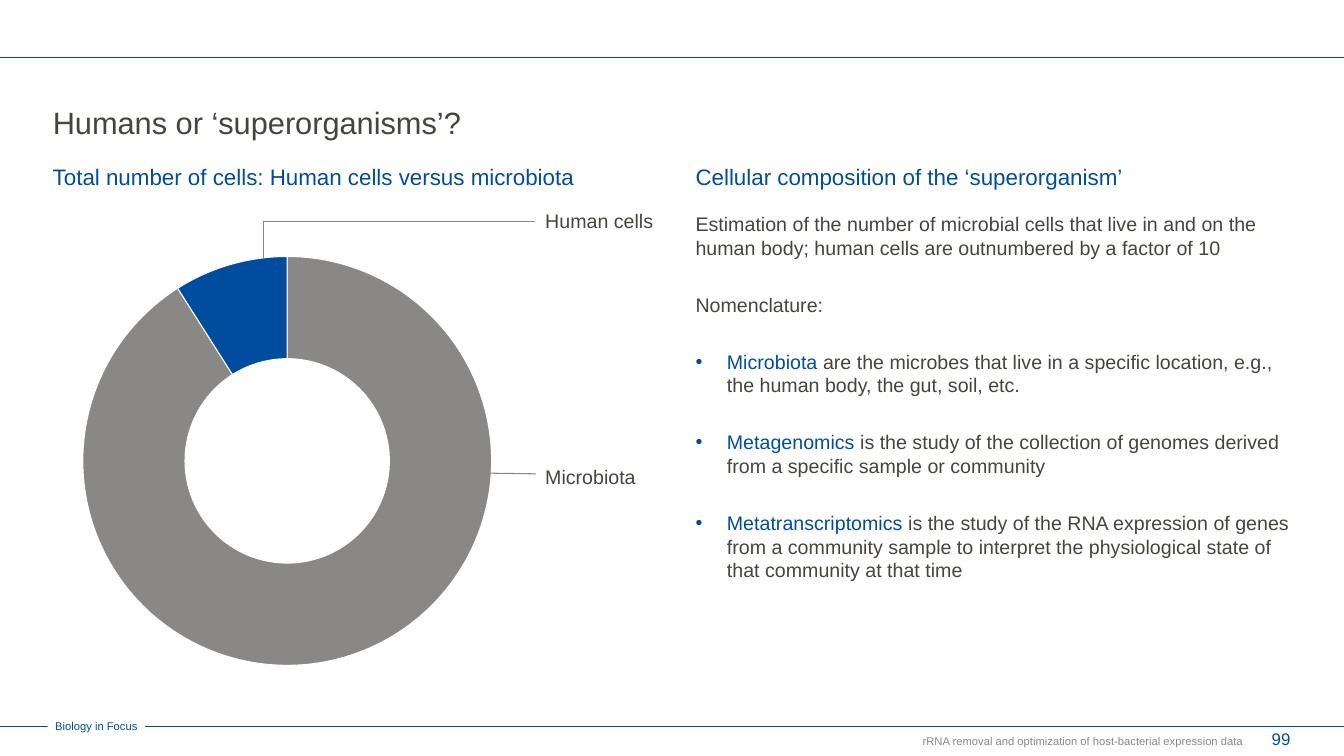
import pptx
import pptx.chart.data
import pptx.dml.color
import pptx.enum.chart
import pptx.enum.shapes
import pptx.enum.text
import pptx.oxml
import pptx.oxml.ns
import pptx.util
from lxml import etree

Cm, Pt = pptx.util.Cm, pptx.util.Pt
ALIGN = pptx.enum.text.PP_ALIGN
ANCHOR = pptx.enum.text.MSO_ANCHOR
LINE = pptx.enum.shapes.MSO_CONNECTOR
qn = pptx.oxml.ns.qn

BLUE, GREY, DARK, WHITE = "004D9F", "8A8886", "47443F", "FFFFFF"
WIDTH, HEIGHT = 33.87, 19.05
LEFT, RIGHT, COLUMN = 1.33, 17.53, 15.01
LABEL_X = 13.74

TITLE = "Humans or ‘superorganisms’?"
HEADINGS = [
    (LEFT, "Total number of cells: Human cells versus microbiota"),
    (RIGHT, "Cellular composition of the ‘superorganism’"),
]
INTRO = [
    "Estimation of the number of microbial cells that live in and on the "
    "human body; human cells are outnumbered by a factor of 10",
    "Nomenclature:",
]
TERMS = [
    ("Microbiota", " are the microbes that live in a specific location, e.g., "
     "the human body, the gut, soil, etc."),
    ("Metagenomics", " is the study of the collection of genomes derived from "
     "a specific sample or community"),
    ("Metatranscriptomics", " is the study of the RNA expression of genes from "
     "a community sample to interpret the physiological state of that "
     "community at that time"),
]
SLICES = [("1", 91, GREY), ("2", 9, BLUE)]
LABELS = [(5.21, "Human cells"), (11.66, "Microbiota")]
PLOT = {"x": 0.002, "y": 0.038, "w": 0.761, "h": 0.936}
TAGLINE = "Biology in Focus"
FOOTER = "rRNA removal and optimization of host-bacterial expression data"


def rgb(value):
    return pptx.dml.color.RGBColor.from_string(value)


def add_run(p, text, size=14, color=DARK):
    r = p.add_run()
    r.text = text
    r.font.name, r.font.size = "Arial", Pt(size)
    r.font.color.rgb = rgb(color)


def set_frame(tf, anchor=ANCHOR.TOP, wrap=True):
    tf.margin_left = tf.margin_right = tf.margin_top = tf.margin_bottom = 0
    tf.auto_size = pptx.enum.text.MSO_AUTO_SIZE.NONE
    tf.vertical_anchor, tf.word_wrap = anchor, wrap


def add_text(s, box, text, size=14, color=DARK, align=ALIGN.LEFT,
             spacing=1.0, **frame):
    sp = s.shapes.add_textbox(*map(Cm, box))
    set_frame(sp.text_frame, **frame)
    p = sp.text_frame.paragraphs[0]
    p.alignment, p.line_spacing = align, spacing
    add_run(p, text, size, color)
    return sp


def add_line(s, start, end, color, kind=LINE.STRAIGHT):
    sp = s.shapes.add_connector(kind, *map(Cm, start + end))
    sp.line.color.rgb, sp.line.width = rgb(color), Pt(0.75)
    etree.SubElement(sp._element.spPr, qn("a:effectLst"))
    return sp


def add_bullet(p):
    pPr = p._p.get_or_add_pPr()
    pPr.set("marL", str(Cm(0.79)))
    pPr.set("indent", str(-Cm(0.79)))
    color = etree.SubElement(pPr, qn("a:buClr"))
    etree.SubElement(color, qn("a:srgbClr"), val=BLUE)
    etree.SubElement(pPr, qn("a:buFont"), typeface="Arial")
    etree.SubElement(pPr, qn("a:buChar"), char="•")


def add_title(s):
    sp = s.shapes.title
    sp.left, sp.top, sp.width, sp.height = map(Cm, (LEFT, 2.72, 31.2, 0.89))
    set_frame(sp.text_frame)
    p = sp.text_frame.paragraphs[0]
    p.alignment, p.line_spacing = ALIGN.LEFT, 0.9
    add_run(p, TITLE, 22)


def add_body(s):
    sp = s.shapes.add_textbox(*map(Cm, (RIGHT, 5.34, COLUMN, 12.2)))
    tf = sp.text_frame
    set_frame(tf)
    for i, item in enumerate(INTRO + TERMS):
        p = tf.add_paragraph() if i else tf.paragraphs[0]
        if isinstance(item, tuple):
            add_bullet(p)
            add_run(p, item[0], color=BLUE)
            add_run(p, item[1])
        else:
            add_run(p, item)
        if i:
            p.space_before = Pt(24)


def add_ring(s):
    names, values, colors = zip(*SLICES)
    data = pptx.chart.data.CategoryChartData()
    data.categories = names
    data.add_series("Series 1", values)
    kind = pptx.enum.chart.XL_CHART_TYPE.DOUGHNUT
    box = map(Cm, (2.06, 6.04, 13.54, 11.02))
    chart = s.shapes.add_chart(kind, *box, data).chart
    chart.has_legend = chart.has_title = False
    chart.font.name, chart.font.size = "Arial", Pt(10)
    chart.font.color.rgb = rgb(DARK)
    plot = chart.plots[0]
    plot.vary_by_categories = True
    for i, color in enumerate(colors):
        look = plot.series[0].points[i].format
        look.fill.solid()
        look.fill.fore_color.rgb = rgb(color)
        look.line.color.rgb, look.line.width = rgb(WHITE), Pt(0.75)
    area = chart._chartSpace.chart.plotArea
    area.find(".//" + qn("c:holeSize")).set("val", "50")
    for old in area.findall(qn("c:layout")):
        area.remove(old)
    layout = etree.Element(qn("c:layout"))
    area.insert(0, layout)
    manual = etree.SubElement(layout, qn("c:manualLayout"))
    etree.SubElement(manual, qn("c:layoutTarget"), val="inner")
    for mode in ("xMode", "yMode"):
        etree.SubElement(manual, qn("c:" + mode), val="edge")
    for side, share in PLOT.items():
        etree.SubElement(manual, qn("c:" + side), val=str(share))


def add_leaders(s):
    bent = add_line(s, (13.49, 5.59), (6.65, 6.5), GREY, LINE.ELBOW)
    guides = bent._element.spPr.find(qn("a:prstGeom")).get_or_add_avLst()
    etree.SubElement(guides, qn("a:gd"), name="adj1", fmla="val 100000")
    add_line(s, (11.46, 11.91), (13.51, 11.94), GREY)


def main():
    prs = pptx.Presentation()
    prs.slide_width, prs.slide_height = Cm(WIDTH), Cm(HEIGHT)
    s = prs.slides.add_slide(prs.slide_layouts[5])

    for y in (1.45, 18.31):
        add_line(s, (0, y), (WIDTH, y), BLUE)
    tag = add_text(s, (1.2, 18.03, 2.46, 0.51), TAGLINE, size=8,
                   color=BLUE, align=ALIGN.CENTER, anchor=ANCHOR.MIDDLE)
    tag.fill.solid()
    tag.fill.fore_color.rgb = rgb(WHITE)
    add_text(s, (12.14, 18.5, 19.2, 0.33), FOOTER, size=8, color=GREY,
             align=ALIGN.RIGHT, anchor=ANCHOR.MIDDLE)
    add_text(s, (31.63, 18.39, 0.89, 0.46), "99", size=12, color=BLUE,
             align=ALIGN.RIGHT, anchor=ANCHOR.MIDDLE)

    add_title(s)
    for x, heading in HEADINGS:
        add_text(s, (x, 4.11, COLUMN, 0.79), heading, size=16, color=BLUE)
    add_ring(s)
    add_leaders(s)
    for y, label in LABELS:
        add_text(s, (LABEL_X, y, 2.54, 0.89), label, spacing=1.1, wrap=False)
    add_body(s)
    prs.save("out.pptx")


if __name__ == "__main__":
    main()
